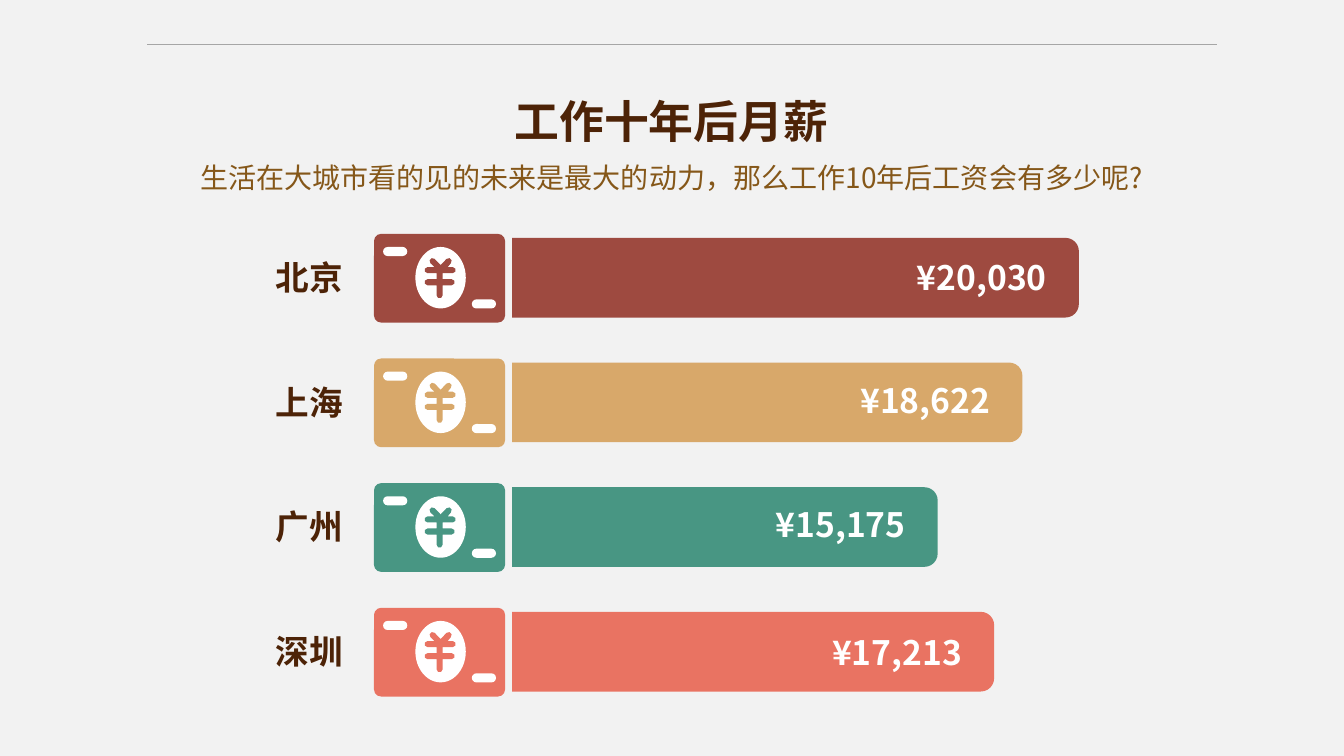
import math

import lxml.etree
import pptx
import pptx.dml.color
import pptx.enum.shapes
import pptx.enum.text
import pptx.oxml.ns
import pptx.util

Inches = pptx.util.Inches
SHAPE = pptx.enum.shapes.MSO_SHAPE
FONT = "Noto Sans CJK SC"
COLORS = {
    "paper": "F2F2F2", "white": "FFFFFF", "rule": "A6A6A6",
    "brown": "4D2307", "ochre": "855719",
    "red": "9E4A40", "gold": "D8A86A", "green": "489683", "coral": "E97362",
}
STYLES = {
    "title": ("brown", {"size": pptx.util.Pt(32), "bold": True}),
    "subtitle": ("ochre", {"size": pptx.util.Pt(20), "bold": False}),
    "city": ("brown", {"size": pptx.util.Pt(24), "bold": True}),
    "salary": ("white", {"size": pptx.util.Pt(24), "bold": True}),
}
CITIES = [
    ("北京", "¥20,030 ", 5.62, 0.18, "red"),
    ("上海", "¥18,622 ", 5.06, 0.16, "gold"),
    ("广州", "¥15,175 ", 4.22, 0.16, "green"),
    ("深圳", "¥17,213 ", 4.78, 0.19, "coral"),
]
YEN_ARMS = [
    (0.78, 0.36, 0, [(0.73, 0.33)]),
    (0.74, 0.27, -45, [(0.66, 0.31)]),
    (0.58, 0.27, -135, [(0.6, 0.33)]),
    (0.53, 0.36, 180, [(0.62, 0.39), (0.62, 0.45)]),
    (0.53, 0.48, 180, [(0.62, 0.51)]),
    (0.65, 0.61, 90, [(0.68, 0.51)]),
    (0.77, 0.48, 0, [(0.68, 0.45), (0.68, 0.39)]),
]


def rgb(name):
    """Return the named colour."""
    return pptx.dml.color.RGBColor.from_string(COLORS[name])


def paint(shape, color):
    """Give a shape a flat fill without line or shadow."""
    shape.fill.solid()
    shape.fill.fore_color.rgb = rgb(color)
    shape.line.fill.background()
    shape.shadow.inherit = False


def add_text(slide, box, text, style, wrap=True):
    """Write one centred line of styled text in a box."""
    frame = slide.shapes.add_textbox(*map(Inches, box)).text_frame
    frame.word_wrap = wrap
    frame.auto_size = pptx.enum.text.MSO_AUTO_SIZE.SHAPE_TO_FIT_TEXT
    paragraph = frame.paragraphs[0]
    paragraph.alignment = pptx.enum.text.PP_ALIGN.CENTER
    run = paragraph.add_run()
    run.text = text
    color, settings = STYLES[style]
    for key, value in settings.items():
        setattr(run.font, key, value)
    run.font.name = FONT
    run.font.color.rgb = rgb(color)
    east_asian = lxml.etree.SubElement(run._r.get_or_add_rPr(), pptx.oxml.ns.qn("a:ea"))
    east_asian.set("typeface", FONT)


def yen_outline(left, top):
    """Return the outline of the yen sign with rounded stroke ends."""
    points = []
    for x, y, angle, inner_corners in YEN_ARMS:
        turns = [math.radians(angle + turn) for turn in (90, 30, -30, -90)]
        points += [(x + 0.03 * math.cos(a), y + 0.03 * math.sin(a)) for a in turns]
        points += inner_corners
    return [(Inches(left + x), Inches(top + y)) for x, y in points]


def add_banknote(slide, left, top, color):
    """Draw a banknote with a yen sign as a group."""
    shapes = slide.shapes.add_group_shape().shapes
    parts = [
        (SHAPE.ROUNDED_RECTANGLE, 0, 0, 1.3, 0.88, 0.08, color),
        (SHAPE.ROUNDED_RECTANGLE, 0.09, 0.13, 0.24, 0.09, 0.5, "white"),
        (SHAPE.OVAL, 0.41, 0.13, 0.5, 0.61, None, "white"),
        (SHAPE.ROUNDED_RECTANGLE, 0.97, 0.65, 0.24, 0.09, 0.5, "white"),
    ]
    for kind, x, y, width, height, rounding, part_color in parts:
        part = shapes.add_shape(kind, Inches(left + x), Inches(top + y),
                                Inches(width), Inches(height))
        if rounding:
            part.adjustments[0] = rounding
        paint(part, part_color)
    start, *rest = yen_outline(left, top)
    yen = shapes.build_freeform(*start)
    yen.add_line_segments(rest)
    paint(yen.convert_to_shape(), color)


def add_salary_row(slide, left, top, city, salary, length, salary_drop, color):
    """Place a city, its banknote and its salary bar in one row."""
    bar_left, thickness = left + 2.45, 0.79
    bar = slide.shapes.add_shape(
        SHAPE.ROUND_2_SAME_RECTANGLE,
        Inches(bar_left + (length - thickness) / 2),
        Inches(top + 0.04 + (thickness - length) / 2),
        Inches(thickness), Inches(length))
    bar.rotation = 90
    paint(bar, color)
    add_banknote(slide, left + 1.08, top, color)
    add_text(slide, (left, top + 0.18, 0.88, 0.5), city, "city", wrap=False)
    salary_box = (bar_left + length - 1.85, top + salary_drop, 1.85, 0.5)
    add_text(slide, salary_box, salary, "salary")


def add_header(slide, left, top, width):
    """Draw the thin rule with the title and subtitle below it."""
    rule = slide.shapes.add_connector(
        pptx.enum.shapes.MSO_CONNECTOR.STRAIGHT,
        Inches(left), Inches(top), Inches(left + width), Inches(top))
    rule.line.color.rgb = rgb("rule")
    rule.line.width = pptx.util.Pt(0.5)
    lxml.etree.SubElement(rule._element.spPr, pptx.oxml.ns.qn("a:effectLst"))
    add_text(slide, (left + 3.51, top + 0.44, 3.38, 0.64), "工作十年后月薪", "title")
    add_text(slide, (left - 0.35, top + 1.1, 11.1, 0.44),
             "生活在大城市看的见的未来是最大的动力，那么工作10年后工资会有多少呢?", "subtitle")


def main():
    """Build and save the salary slide."""
    deck = pptx.Presentation()
    deck.slide_width, deck.slide_height = Inches(13.33), Inches(7.5)
    slide = deck.slides.add_slide(deck.slide_layouts[6])
    slide.background.fill.solid()
    slide.background.fill.fore_color.rgb = rgb("paper")
    add_header(slide, 1.46, 0.44, 10.61)
    row_pitch = (6.03 - 2.32) / (len(CITIES) - 1)
    for index, row in enumerate(CITIES):
        add_salary_row(slide, 2.63, 2.32 + index * row_pitch, *row)
    deck.save("out.pptx")


if __name__ == "__main__":
    main()
